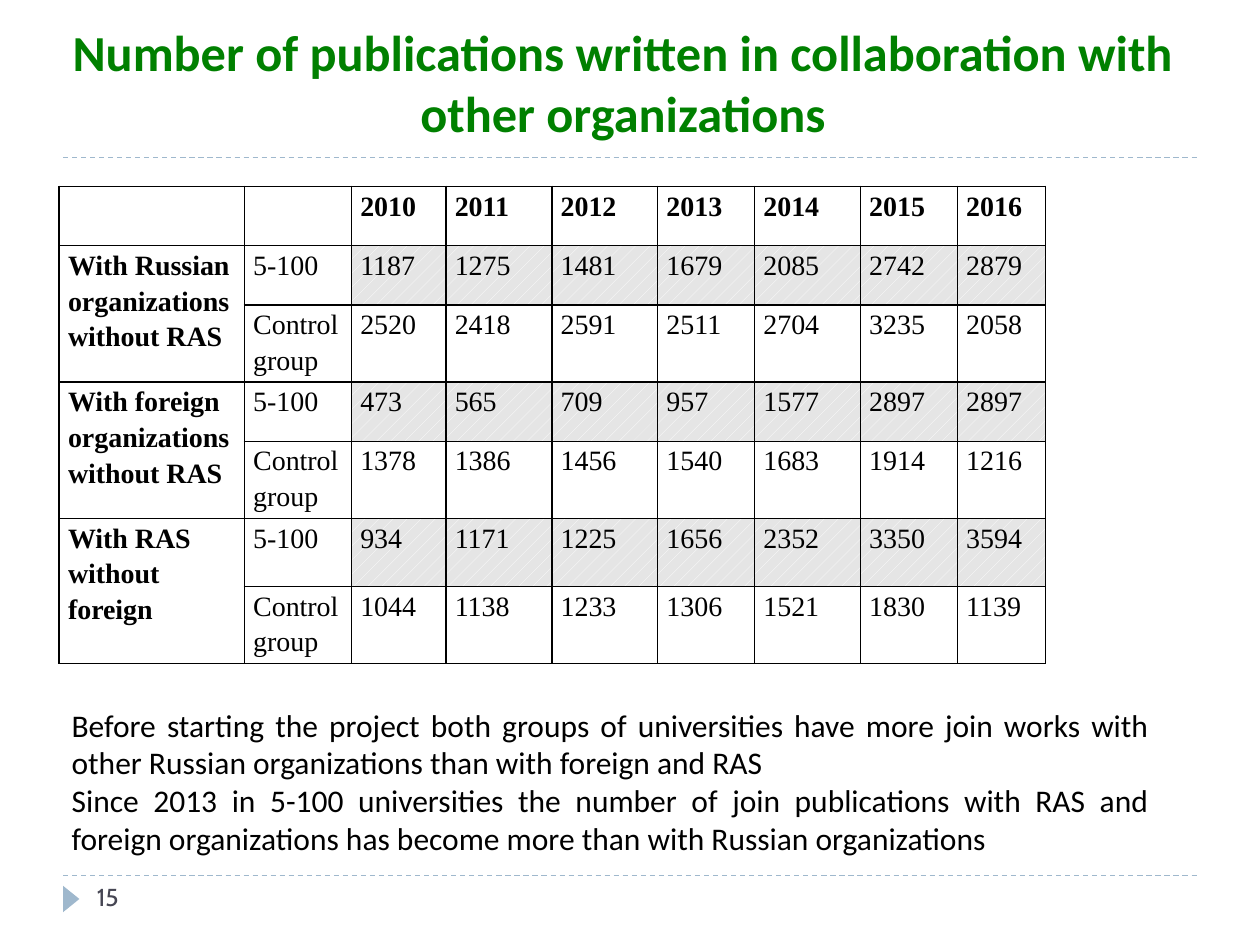
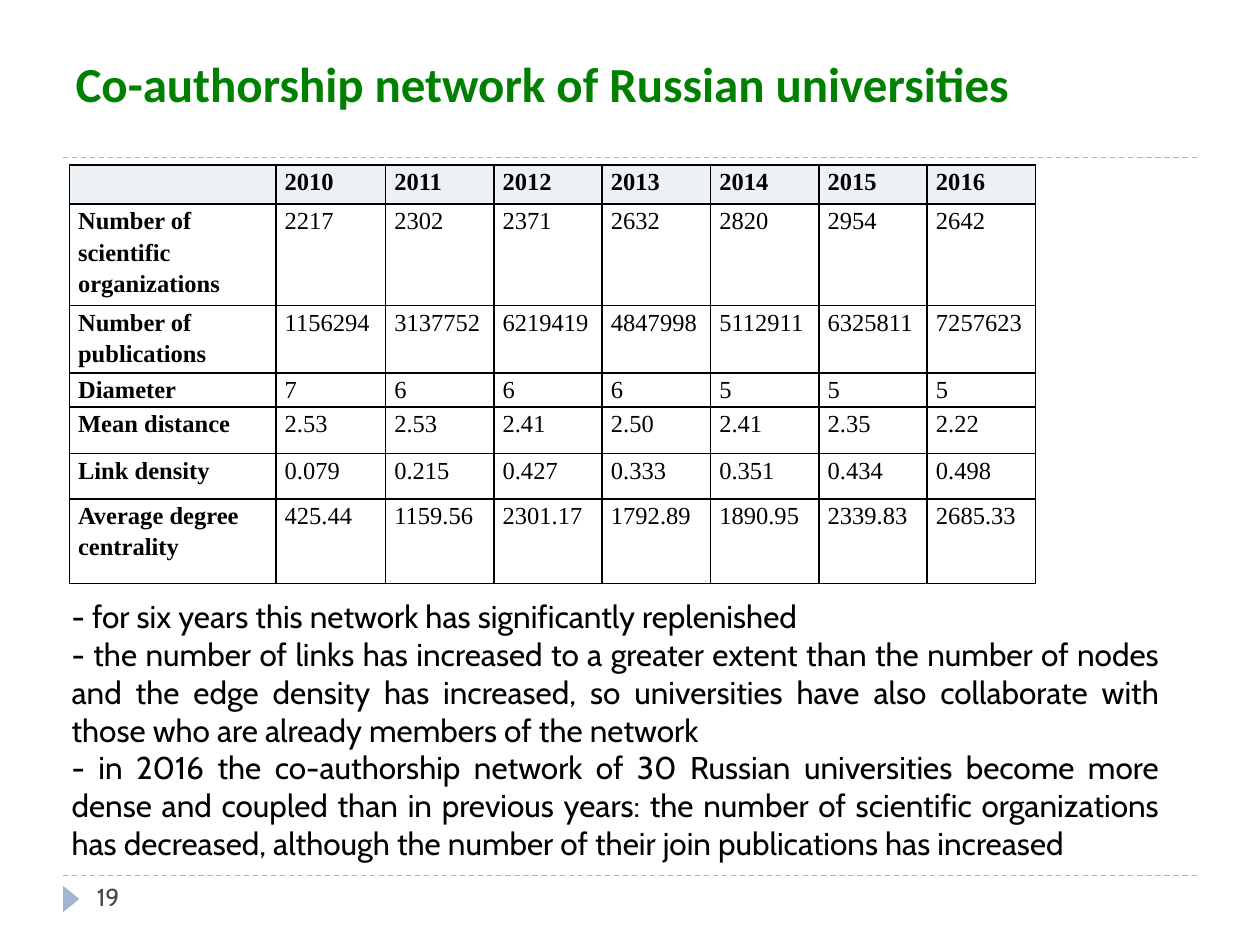
from lxml import etree
from pptx import Presentation
from pptx.dml.color import RGBColor
from pptx.enum.dml import MSO_LINE, MSO_PATTERN
from pptx.enum.shapes import MSO_CONNECTOR, MSO_SHAPE
from pptx.enum.text import MSO_ANCHOR, MSO_AUTO_SIZE, PP_ALIGN
from pptx.oxml.ns import qn
from pptx.util import Inches, Pt

DASH = MSO_LINE.DASH
DOTTED = MSO_PATTERN.PERCENT_10
STRAIGHT = MSO_CONNECTOR.STRAIGHT
TRIANGLE = MSO_SHAPE.ISOSCELES_TRIANGLE
BOTTOM, TOP = MSO_ANCHOR.BOTTOM, MSO_ANCHOR.TOP
NO_AUTOFIT = MSO_AUTO_SIZE.NONE
LEFT, CENTER, JUSTIFY = PP_ALIGN.LEFT, PP_ALIGN.CENTER, PP_ALIGN.JUSTIFY

COLORS = {
    "title": "008000",
    "text": "000000",
    "number": "464653",
    "accent": "9FB8CD",
    "header": "ECF1F5",
    "hatch": "FFFFFF",
    "hatch_back": "E5E5E5",
}
TITLE_FONT = {"name": "Calibri", "bold": True}
NUMBER_FONT = {"name": "Cabin", "size": Pt(14)}
TABLE_FONT = "Times New Roman"
CELL_MARGINS = {
    "margin_left": Inches(0.07),
    "margin_right": Inches(0.07),
    "margin_top": 0,
    "margin_bottom": 0,
}
YEARS = [str(year) for year in range(2010, 2017)]

# Each group: row label, 5-100 values, control group values
COLLABORATION = [
    ("With Russian organizations without RAS",
     "1187 1275 1481 1679 2085 2742 2879",
     "2520 2418 2591 2511 2704 3235 2058"),
    ("With foreign organizations\nwithout RAS",
     "473 565 709 957 1577 2897 2897",
     "1378 1386 1456 1540 1683 1914 1216"),
    ("With RAS without foreign",
     "934 1171 1225 1656 2352 3350 3594",
     "1044 1138 1233 1306 1521 1830 1139"),
]
NETWORK = [
    ("Number of scientific organizations", "2217 2302 2371 2632 2820 2954 2642"),
    ("Number of publications",
     "1156294 3137752 6219419 4847998 5112911 6325811 7257623"),
    ("Diameter", "7 6 6 6 5 5 5"),
    ("Mean distance", "2.53 2.53 2.41 2.50 2.41 2.35 2.22"),
    ("Link density", "0.079 0.215 0.427 0.333 0.351 0.434 0.498"),
    ("Average degree centrality",
     "425.44 1159.56 2301.17 1792.89 1890.95 2339.83 2685.33"),
]
COLLABORATION_NOTES = [
    "Before starting the project both groups of universities have more join works "
    "with other Russian organizations than with foreign and RAS",
    "Since 2013 in 5-100 universities the number of join publications with RAS and "
    "foreign organizations has become more than with Russian organizations",
]
NETWORK_NOTES = [
    "- for six years this network has significantly replenished",
    "- the number of links has increased to a greater extent than the number of nodes "
    "and the edge density has increased, so universities have also collaborate with "
    "those who are already members of the network",
    "- in 2016 the co-authorship network of 30 Russian universities become more dense "
    "and coupled than in previous years: the number of scientific organizations has "
    "decreased, although the number of their join publications has increased",
]


def rgb(name):
    return RGBColor.from_string(COLORS[name])


def apply_format(target, values):
    for attribute, value in values.items():
        setattr(target, attribute, value)


def place(shape, box):
    for side, length in zip(("left", "top", "width", "height"), box):
        setattr(shape, side, Inches(length))


def write(frame, lines, font, color="text", **paragraph_format):
    frame.word_wrap = True
    for index, line in enumerate(lines):
        paragraph = frame.add_paragraph() if index else frame.paragraphs[0]
        apply_format(paragraph, paragraph_format)
        run = paragraph.add_run()
        run.text = line
        apply_format(run.font, font)
        run.font.color.rgb = rgb(color)


def add_text(slide, box, lines, font, color="text", align=LEFT):
    frame = slide.shapes.add_textbox(*map(Inches, box)).text_frame
    write(frame, lines, font, color, alignment=align)


def add_rule(slide, y):
    rule = slide.shapes.add_connector(
        STRAIGHT, Inches(0.5), Inches(y), Inches(9.5), Inches(y))
    rule.line.color.rgb = rgb("accent")
    apply_format(rule.line, {"width": Pt(0.75), "dash_style": DASH})
    etree.SubElement(rule._element.spPr, qn("a:effectLst"))


def add_framed_slide(deck, number, title, box, size, align):
    slide = deck.slides.add_slide(deck.slide_layouts[5])
    # Rules and page marker
    for y in (6.95, 1.25):
        add_rule(slide, y)
    marker = slide.shapes.add_shape(
        TRIANGLE, Inches(0.46), Inches(7.07), Inches(0.21), Inches(0.13))
    marker.rotation = 90
    marker.shadow.inherit = False
    marker.fill.solid()
    marker.fill.fore_color.rgb = rgb("accent")
    marker.line.fill.background()
    add_text(slide, (0.67, 6.95, 2.17, 0.4), [str(number)], NUMBER_FONT, "number")
    # Title
    heading = slide.shapes.title
    place(heading, box)
    apply_format(heading.text_frame,
                 {"vertical_anchor": BOTTOM, "auto_size": NO_AUTOFIT})
    write(heading.text_frame, [title], {**TITLE_FONT, "size": Pt(size)}, "title",
          alignment=align)
    return slide


def add_borders(cell):
    properties = cell._tc.get_or_add_tcPr()
    for index, side in enumerate(("lnL", "lnR", "lnT", "lnB")):
        border = etree.Element(qn(f"a:{side}"), w=str(Pt(1)))
        fill = etree.SubElement(border, qn("a:solidFill"))
        etree.SubElement(fill, qn("a:srgbClr"), val=COLORS["text"])
        properties.insert(index, border)


def fill_cell(cell, text, size, bold, align, shade):
    apply_format(cell, {**CELL_MARGINS, "vertical_anchor": TOP})
    if text:
        font = {"name": TABLE_FONT, "size": Pt(size), "bold": bold}
        write(cell.text_frame, text.split("\n"), font,
              alignment=align, line_spacing=1.15)
    if shade == "hatch":
        cell.fill.patterned()
        cell.fill.pattern = DOTTED
        cell.fill.fore_color.rgb = rgb("hatch")
        cell.fill.back_color.rgb = rgb("hatch_back")
    elif shade:
        cell.fill.solid()
        cell.fill.fore_color.rgb = rgb(shade)
    else:
        cell.fill.background()
    add_borders(cell)


def add_year_table(slide, left, top, widths, heights, rows, size, shade_of,
                   align=LEFT):
    table = slide.shapes.add_table(
        len(rows), len(widths), Inches(left), Inches(top),
        Inches(sum(widths)), Inches(sum(heights))).table
    apply_format(table, {"first_row": False, "horz_banding": False})
    for column, width in zip(table.columns, widths):
        column.width = Inches(width)
    for row, height in zip(table.rows, heights):
        row.height = Inches(height)
    for r, values in enumerate(rows):
        for c, text in enumerate(values):
            bold = r == 0 or c == 0
            fill_cell(table.cell(r, c), text, size, bold,
                      LEFT if bold else align, shade_of(r, c))
    return table


def add_collaboration_slide(deck):
    slide = add_framed_slide(
        deck, 15,
        "Number of publications written in collaboration with other organizations",
        (0.39, 0.17, 9.11, 1.01), 28.8, CENTER)
    add_text(slide, (0.47, 5.55, 8.75, 1.31), COLLABORATION_NOTES,
             {"name": "Calibri", "size": Pt(18)}, align=JUSTIFY)
    rows = [["", ""] + YEARS]
    for label, project, control in COLLABORATION:
        rows.append([label, "5-100"] + project.split())
        rows.append(["", "Control group"] + control.split())
    table = add_year_table(
        slide, 0.47, 1.48,
        [1.47, 0.85, 0.75, 0.84, 0.84, 0.77, 0.84, 0.77, 0.7],
        [0.47, 0.47, 0.61, 0.47, 0.61, 0.54, 0.61], rows, 16,
        lambda r, c: "hatch" if r % 2 and c > 1 else None)
    # Each group label spans its two rows
    for r in range(1, len(rows), 2):
        table.cell(r, 0).merge(table.cell(r + 1, 0))


def add_network_slide(deck):
    slide = add_framed_slide(
        deck, 19, "Co-authorship network of Russian universities",
        (0.5, 0.17, 9, 0.77), 28, LEFT)
    rows = [[""] + YEARS] + [[label] + values.split() for label, values in NETWORK]
    add_year_table(
        slide, 0.55, 1.31, [1.64, 0.87] + [0.86] * 6,
        [0.31, 0.8, 0.53, 0.27, 0.37, 0.36, 0.67], rows, 14,
        lambda r, c: None if r else "header", JUSTIFY)
    add_text(slide, (0.47, 4.69, 8.83, 2.27), NETWORK_NOTES,
             {"name": "Cabin", "size": Pt(18)}, align=JUSTIFY)


def main():
    deck = Presentation()
    deck.slide_width, deck.slide_height = Inches(10), Inches(7.5)
    add_collaboration_slide(deck)
    add_network_slide(deck)
    deck.save("out.pptx")


if __name__ == "__main__":
    main()
